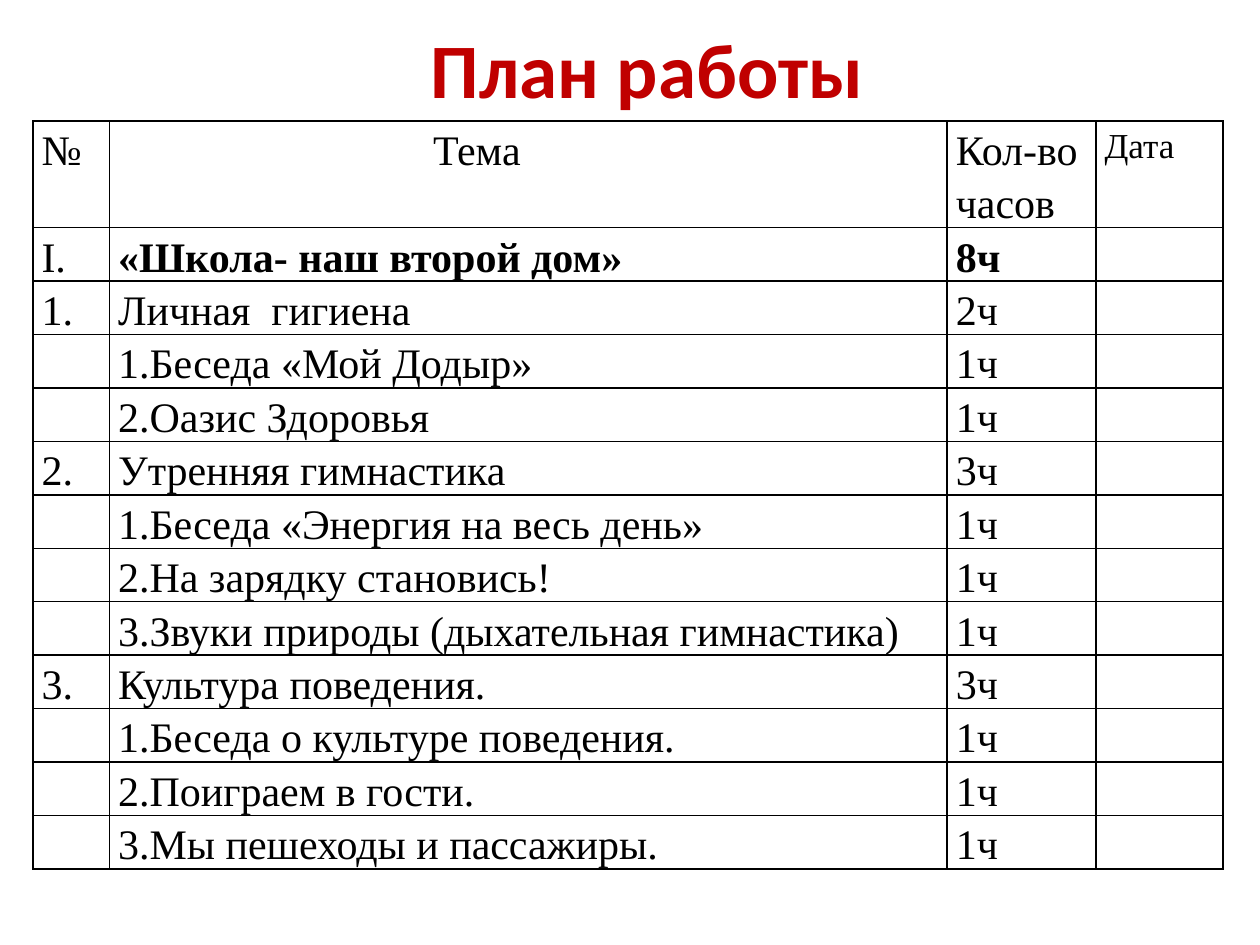
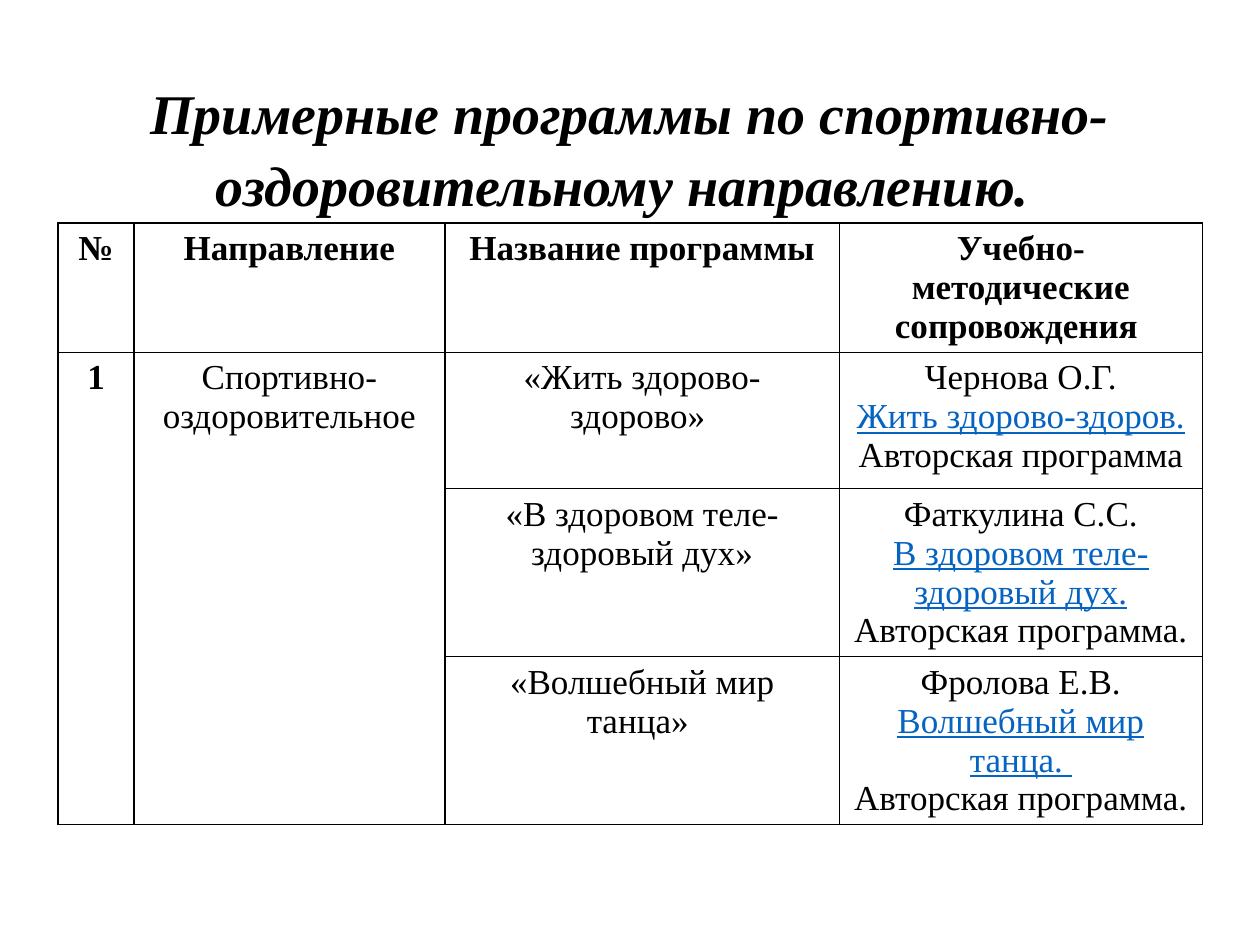
from lxml.etree import SubElement
from pptx import Presentation
from pptx.dml.color import RGBColor
from pptx.enum.text import MSO_ANCHOR, MSO_AUTO_SIZE, PP_ALIGN
from pptx.oxml.ns import qn
from pptx.util import Pt

COLORS = {"text": "000000", "accent": "C00000", "link": "0563C1", "paper": "FFFFFF"}
SERIF = "Times New Roman"
BOLD = {"bold": True}
LINK = {"color": "link", "underline": True}


def set_all(target, values):
    for name, value in values.items():
        setattr(target, name, value)


class Deck:
    def __init__(self):
        self.prs = Presentation()
        self.prs.slide_width, self.prs.slide_height = Pt(720), Pt(540)
        self.s = None

    def slide(self):
        self.s = self.prs.slides.add_slide(self.prs.slide_layouts[5])

    def paragraph(self, p, text, font, layout):
        set_all(p, layout)
        r = p.add_run()
        r.text = text
        font = {"name": SERIF, "color": "text", **font}
        r.font.color.rgb = RGBColor.from_string(COLORS[font.pop("color")])
        set_all(r.font, font)

    def title(self, text, at, font, line_spacing, anchor):
        sp = self.s.shapes.title
        set_all(sp, dict(zip(("left", "top", "width", "height"), map(Pt, at))))
        tf = sp.text_frame
        set_all(tf, {"word_wrap": True, "auto_size": MSO_AUTO_SIZE.NONE,
                     "vertical_anchor": anchor})
        self.paragraph(tf.paragraphs[0], text, font,
                       {"alignment": PP_ALIGN.CENTER, "line_spacing": line_spacing})

    def borders(self, cell):
        tc_pr = cell._tc.get_or_add_tcPr()
        for side in ("lnL", "lnR", "lnT", "lnB"):
            ln = SubElement(tc_pr, qn(f"a:{side}"), w=str(Pt(1)))
            fill = SubElement(ln, qn("a:solidFill"))
            SubElement(fill, qn("a:srgbClr"), val=COLORS["text"])

    def table(self, left, top, cols, rows, data, font, layout, margins=None, fill=None):
        """Each cell is a list of paragraphs: a text, or a text with its own font values."""
        frame = self.s.shapes.add_table(len(rows), len(cols), Pt(left), Pt(top),
                                        Pt(sum(cols)), Pt(sum(rows)))
        table = frame.table
        set_all(table, {"first_row": False, "horz_banding": False})
        for col, width in zip(table.columns, cols):
            col.width = Pt(width)
        for row, height, values in zip(table.rows, rows, data):
            row.height = Pt(height)
            for cell, items in zip(row.cells, values):
                self.borders(cell)
                if fill:
                    cell.fill.solid()
                    cell.fill.fore_color.rgb = RGBColor.from_string(COLORS[fill])
                else:
                    cell.fill.background()
                set_all(cell, margins or {})
                tf = cell.text_frame
                for i, item in enumerate(items):
                    text, own = (item, {}) if isinstance(item, str) else item
                    p = tf.add_paragraph() if i else tf.paragraphs[0]
                    self.paragraph(p, text, {**font, **own}, layout)
        return table


def work_plan(deck):
    topics = [
        ("1.", "Личная  гигиена", "2ч"),
        ("", "1.Беседа «Мой Додыр»", "1ч"),
        ("", "2.Оазис Здоровья", "1ч"),
        ("2.", "Утренняя гимнастика", "3ч"),
        ("", "1.Беседа «Энергия на весь день»", "1ч"),
        ("", "2.На зарядку становись!", "1ч"),
        ("", "3.Звуки природы (дыхательная гимнастика)", "1ч"),
        ("3.", "Культура поведения.", "3ч"),
        ("", "1.Беседа о культуре поведения.", "1ч"),
        ("", "2.Поиграем в гости.", "1ч"),
        ("", "3.Мы пешеходы и пассажиры.", "1ч"),
    ]
    data = [
        [["№"], ["Тема"], ["Кол-во часов"], [("Дата", {"size": Pt(20)})]],
        [["I."], [("«Школа- наш второй дом»", BOLD)], [("8ч", BOLD)], []],
    ]
    data += [[[text] if text else [] for text in topic] + [[]] for topic in topics]

    deck.slide()
    deck.title("План работы", (60, 8.5, 620, 67),
               {"name": "Calibri", "size": Pt(44), "bold": True, "color": "accent"},
               0.9, MSO_ANCHOR.MIDDLE)
    table = deck.table(
        18.75, 69.1, [43.75, 478.75, 85, 72.75], [61] + [30.5] * (len(data) - 1), data,
        {"size": Pt(24)}, {"line_spacing": 1.15},
        {"margin_left": Pt(5), "margin_right": Pt(5), "margin_top": 0, "margin_bottom": 0},
        "paper")
    table.cell(0, 1).margin_left = Pt(185)


def sample_programs(deck):
    programs = [
        ("«Жить здорово-здорово» ", "Чернова О.Г.", "Жить здорово-здоров.",
         "Авторская программа"),
        ("«В здоровом теле- здоровый дух»", "Фаткулина С.С.",
         "В здоровом теле- здоровый дух.", "Авторская программа."),
        ("«Волшебный мир танца» ", "Фролова Е.В.", "Волшебный мир танца. ",
         "Авторская программа."),
    ]
    headers = ["№", "Направление", "Название программы",
               "Учебно-методические сопровождения "]
    data = [[[(header, BOLD)] for header in headers]]
    data += [[[], [], [name], [author, (link, LINK), kind]]
             for name, author, link, kind in programs]
    data[1][:2] = [[("1", BOLD)], ["Спортивно-оздоровительное"]]

    deck.slide()
    deck.title("Примерные программы по спортивно-оздоровительному направлению. ",
               (0, 38, 720, 85),
               {"size": Pt(32), "bold": True, "italic": True}, 1.08, MSO_ANCHOR.TOP)
    table = deck.table(33.25, 127.3, [43.2, 177.8, 225.4, 207.4], [74, 78, 96, 96], data,
                       {"size": Pt(20)}, {"alignment": PP_ALIGN.CENTER})
    for col in range(2):
        table.cell(1, col).merge(table.cell(3, col))


def main():
    deck = Deck()
    work_plan(deck)
    sample_programs(deck)
    deck.prs.save("out.pptx")


if __name__ == "__main__":
    main()
